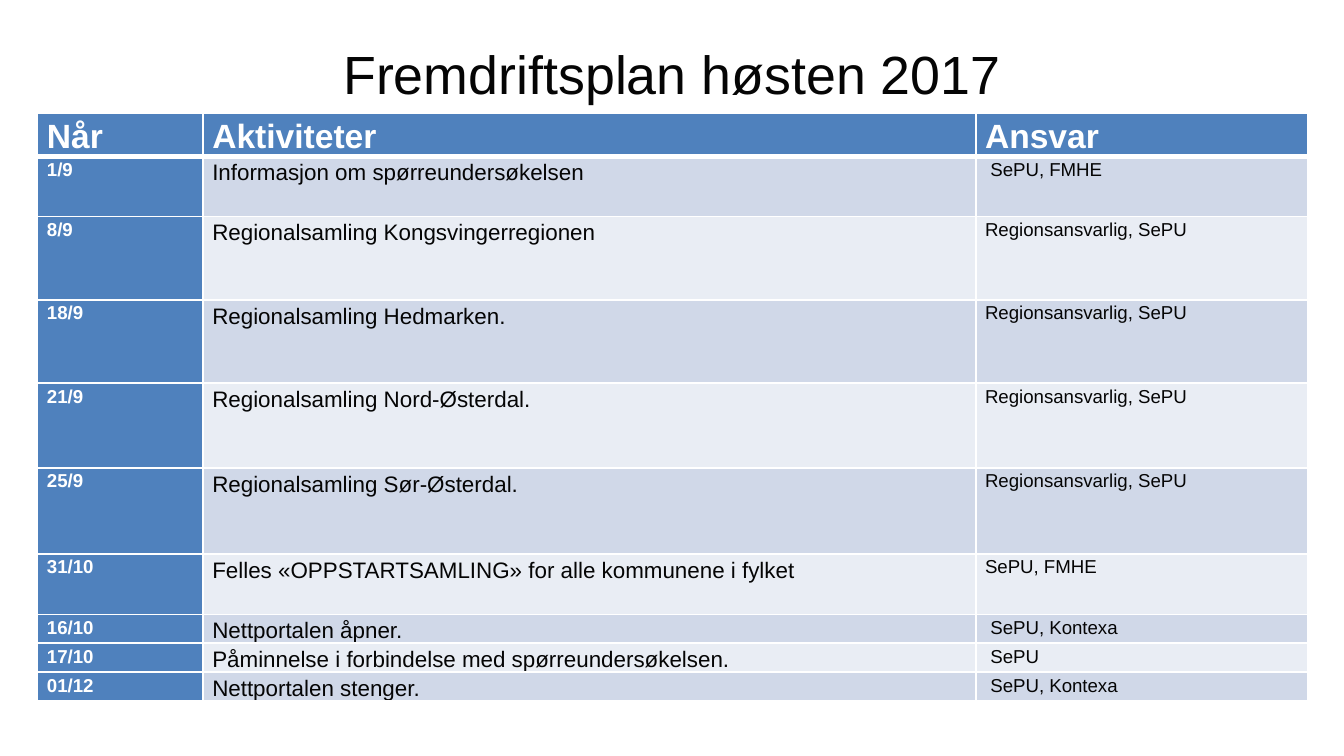
from typing import NamedTuple

from lxml import etree
from pptx import Presentation
from pptx.dml.color import RGBColor
from pptx.enum.text import MSO_ANCHOR, MSO_AUTO_SIZE, PP_ALIGN
from pptx.oxml.ns import qn
from pptx.util import Inches, Pt

CENTER = PP_ALIGN.CENTER
MIDDLE = MSO_ANCHOR.MIDDLE
TOP = MSO_ANCHOR.TOP
NO_AUTOFIT = MSO_AUTO_SIZE.NONE

TITLE_ONLY = 5
SLIDE_WIDTH = 10
SLIDE_HEIGHT = SLIDE_WIDTH * 9 / 16
FONT = "Arial"
WHITE = "FFFFFF"
DARK = "050505"
BLUE = "4F81BD"
BANDS = ("D0D8E8", "E9EDF4")
MARGIN = 0.07
INDENT = 0.04
HEADINGS = ("Når", "Aktiviteter", "Ansvar")
HEADER_HEIGHT = 0.32
COLUMN_WIDTHS = (1.23, 5.75, 2.47)


class Activity(NamedTuple):
    date: str
    task: str
    responsible: str
    height: float
    indent: float = 0


ACTIVITIES = (
    Activity("1/9", "Informasjon om spørreundersøkelsen", "SePU, FMHE", 0.45, INDENT),
    Activity("8/9", "Regionalsamling Kongsvingerregionen", "Regionsansvarlig, SePU", 0.62),
    Activity("18/9", "Regionalsamling Hedmarken.", "Regionsansvarlig, SePU", 0.62),
    Activity("21/9", "Regionalsamling Nord-Østerdal.", "Regionsansvarlig, SePU", 0.63),
    Activity("25/9", "Regionalsamling Sør-Østerdal.", "Regionsansvarlig, SePU", 0.64),
    Activity("31/10", "Felles «OPPSTARTSAMLING» for alle kommunene i fylket", "SePU, FMHE", 0.45),
    Activity("16/10", "Nettportalen åpner.", "SePU, Kontexa", 0.21, INDENT),
    Activity("17/10", "Påminnelse i forbindelse med spørreundersøkelsen.", "SePU", 0.21, INDENT),
    Activity("01/12", "Nettportalen stenger.", "SePU, Kontexa", 0.21, INDENT),
)


def color(value: str) -> RGBColor:
    return RGBColor.from_string(value)


def write(frame, text: str, *, size: float, fill: str = DARK, bold: bool = False,
          align=None, spacing: float | None = None) -> None:
    para = frame.paragraphs[0]
    para.alignment = align
    para.line_spacing = spacing
    span = para.add_run()
    span.text = text
    span.font.name = FONT
    span.font.size = Pt(size)
    span.font.bold = bold
    span.font.color.rgb = color(fill)


def add_borders(cell, top: float = 1, bottom: float = 1) -> None:
    """Draw white cell borders; call before setting the cell's fill."""
    properties = cell._tc.get_or_add_tcPr()
    for side, width in (("L", 1), ("R", 1), ("T", top), ("B", bottom)):
        line = etree.SubElement(properties, qn(f"a:ln{side}"), w=str(Pt(width)))
        solid = etree.SubElement(line, qn("a:solidFill"))
        etree.SubElement(solid, qn("a:srgbClr"), val=WHITE)


def fill_cell(cell, text: str, *, background: str, size: float, fill: str = DARK,
              bold: bool = False, indent: float = 0, top: float = 1, bottom: float = 1) -> None:
    add_borders(cell, top, bottom)
    cell.fill.solid()
    cell.fill.fore_color.rgb = color(background)
    cell.margin_left = Inches(MARGIN + indent)
    cell.margin_right = Inches(MARGIN)
    cell.margin_top = cell.margin_bottom = 0
    cell.vertical_anchor = TOP
    write(cell.text_frame, text, size=size, fill=fill, bold=bold, spacing=1.15)


def add_title(page, text: str) -> None:
    title = page.shapes.title
    title.left, title.top = Inches(0.5), Inches(0.23)
    title.width, title.height = Inches(9), Inches(0.62)
    frame = title.text_frame
    frame.auto_size = NO_AUTOFIT
    frame.vertical_anchor = MIDDLE
    write(frame, text, size=28.8, align=CENTER)


def add_schedule(page) -> None:
    heights = [HEADER_HEIGHT] + [activity.height for activity in ACTIVITIES]
    table = page.shapes.add_table(
        len(heights), len(COLUMN_WIDTHS), Inches(0.28), Inches(0.84),
        Inches(sum(COLUMN_WIDTHS)), Inches(sum(heights))).table
    for column, width in zip(table.columns, COLUMN_WIDTHS):
        column.width = Inches(width)
    for row, height in zip(table.rows, heights):
        row.height = Inches(height)
    for number, heading in enumerate(HEADINGS):
        fill_cell(table.cell(0, number), heading, background=BLUE, size=18,
                  fill=WHITE, bold=True, bottom=3)
    for number, activity in enumerate(ACTIVITIES, start=1):
        band = BANDS[(number - 1) % 2]
        top = 3 if number == 1 else 1
        fill_cell(table.cell(number, 0), activity.date, background=BLUE, size=10,
                  fill=WHITE, bold=True, top=top)
        fill_cell(table.cell(number, 1), activity.task, background=band, size=12, top=top)
        fill_cell(table.cell(number, 2), activity.responsible, background=band, size=10,
                  indent=activity.indent, top=top)


def main() -> None:
    deck = Presentation()
    deck.slide_width, deck.slide_height = Inches(SLIDE_WIDTH), Inches(SLIDE_HEIGHT)
    page = deck.slides.add_slide(deck.slide_layouts[TITLE_ONLY])
    add_title(page, "Fremdriftsplan høsten 2017")
    add_schedule(page)
    deck.save("out.pptx")


if __name__ == "__main__":
    main()
